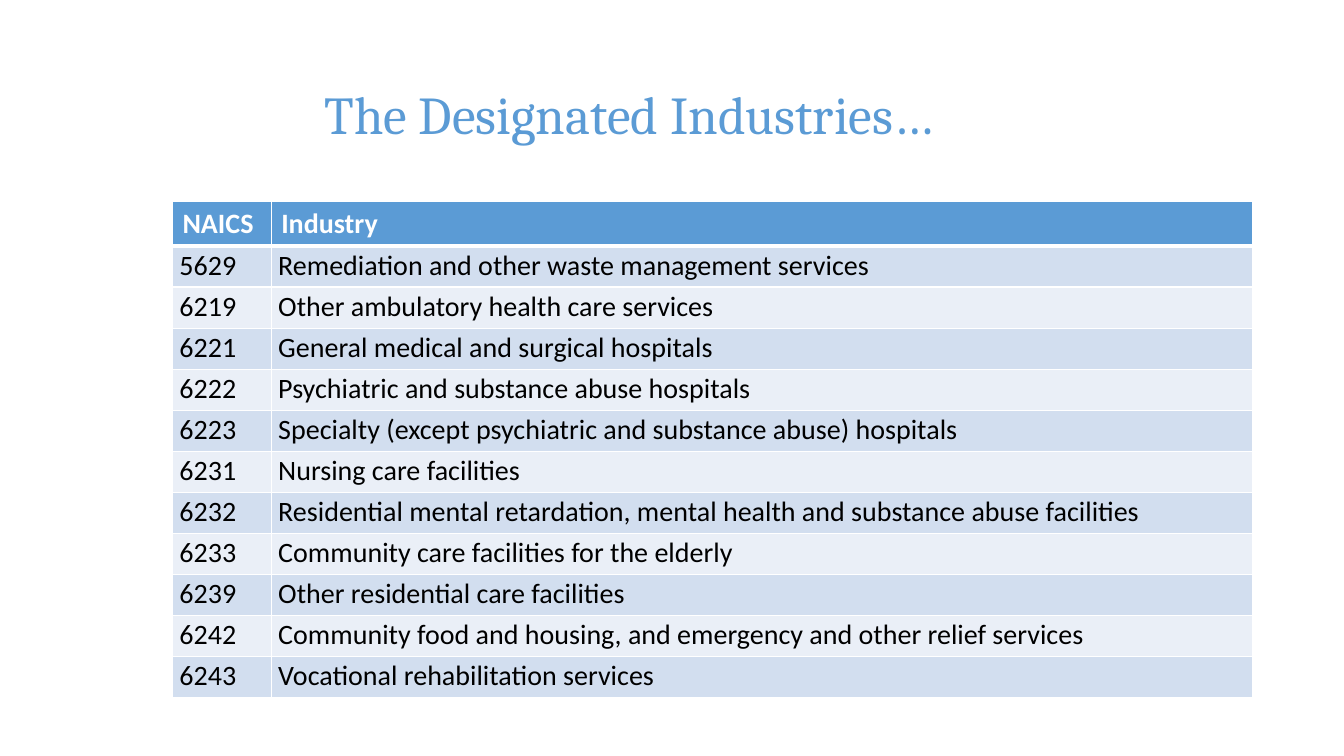
import lxml.etree
import pptx
import pptx.dml.color
import pptx.enum.text
import pptx.oxml.ns
import pptx.util

COLORS = {
    "accent": "5B9BD5",
    "band_dark": "D2DEEF",
    "band_light": "EAEFF7",
    "text": "000000",
    "white": "FFFFFF",
}

INDUSTRIES = [
    ("5629", "Remediation and other waste management services"),
    ("6219", "Other ambulatory health care services"),
    ("6221", "General medical and surgical hospitals"),
    ("6222", "Psychiatric and substance abuse hospitals"),
    ("6223", "Specialty (except psychiatric and substance abuse) hospitals"),
    ("6231", "Nursing care facilities"),
    ("6232", "Residential mental retardation, mental health and substance abuse facilities"),
    ("6233", "Community care facilities for the elderly"),
    ("6239", "Other residential care facilities"),
    ("6242", "Community food and housing, and emergency and other relief services"),
    ("6243", "Vocational rehabilitation services"),
]


class SlideBuilder:
    heading_font = "Cambria"
    body_font = "Calibri"
    heading_size = 38
    body_size = 20

    def __init__(self, presentation):
        self.width = presentation.slide_width
        self.height = presentation.slide_height
        self.slide = presentation.slides.add_slide(presentation.slide_layouts[6])

    def across(self, percent):
        return round(self.width * percent / 100)

    def down(self, percent):
        return round(self.height * percent / 100)

    def color(self, name):
        return pptx.dml.color.RGBColor.from_string(COLORS[name])

    def add_run(self, paragraph, text, font, size, color, bold=False):
        run = paragraph.add_run()
        run.text = text
        run.font.name = font
        run.font.size = pptx.util.Pt(size)
        run.font.bold = bold
        run.font.color.rgb = self.color(color)

    def add_title(self, text, left, top, width, height, indent):
        shape = self.slide.shapes.add_textbox(
            self.across(left), self.down(top), self.across(width), self.down(height))
        frame = shape.text_frame
        frame.word_wrap = True
        frame.vertical_anchor = pptx.enum.text.MSO_ANCHOR.MIDDLE
        frame.margin_left = self.across(indent)
        self.add_run(frame.paragraphs[0], text, self.heading_font, self.heading_size, "accent")

    def add_border(self, cell, side, points):
        properties = cell._tc.get_or_add_tcPr()
        qualify = pptx.oxml.ns.qn
        line = lxml.etree.SubElement(
            properties, qualify(f"a:ln{side}"), w=str(pptx.util.Pt(points)))
        fill = lxml.etree.SubElement(line, qualify("a:solidFill"))
        lxml.etree.SubElement(fill, qualify("a:srgbClr"), val=COLORS["white"])

    def style_cell(self, cell, text, row):
        is_header = row == 0
        borders = {"L": 1, "R": 1, "T": 3 if row == 1 else 1, "B": 3 if is_header else 1}
        for side, points in borders.items():
            self.add_border(cell, side, points)
        paragraph = cell.text_frame.paragraphs[0]
        if is_header:
            fill, color = "accent", "white"
        else:
            fill, color = ("band_dark" if row % 2 else "band_light"), "text"
            cell.margin_left = cell.margin_right = pptx.util.Inches(0.07)
            cell.margin_top = cell.margin_bottom = 0
            paragraph.line_spacing = 1.07
        cell.fill.solid()
        cell.fill.fore_color.rgb = self.color(fill)
        self.add_run(paragraph, text, self.body_font, self.body_size, color, is_header)

    def add_table(self, rows, left, top, column_widths, row_height):
        table = self.slide.shapes.add_table(
            len(rows), len(column_widths), self.across(left), self.down(top),
            self.across(sum(column_widths)), self.down(row_height * len(rows))).table
        for column, width in zip(table.columns, column_widths):
            column.width = self.across(width)
        for row_index, texts in enumerate(rows):
            table.rows[row_index].height = self.down(row_height)
            for column_index, text in enumerate(texts):
                self.style_cell(table.cell(row_index, column_index), text, row_index)


def main():
    presentation = pptx.Presentation()
    presentation.slide_width = pptx.util.Inches(13.33)
    presentation.slide_height = pptx.util.Inches(7.5)
    builder = SlideBuilder(presentation)
    builder.add_table([("NAICS", "Industry")] + INDUSTRIES,
                      left=12.83, top=26.67, column_widths=(7.35, 73), row_height=5.43)
    builder.add_title("The Designated Industries…",
                      left=19.05, top=5.33, width=74.12, height=19.33, indent=5.1)
    presentation.save("out.pptx")


if __name__ == "__main__":
    main()
